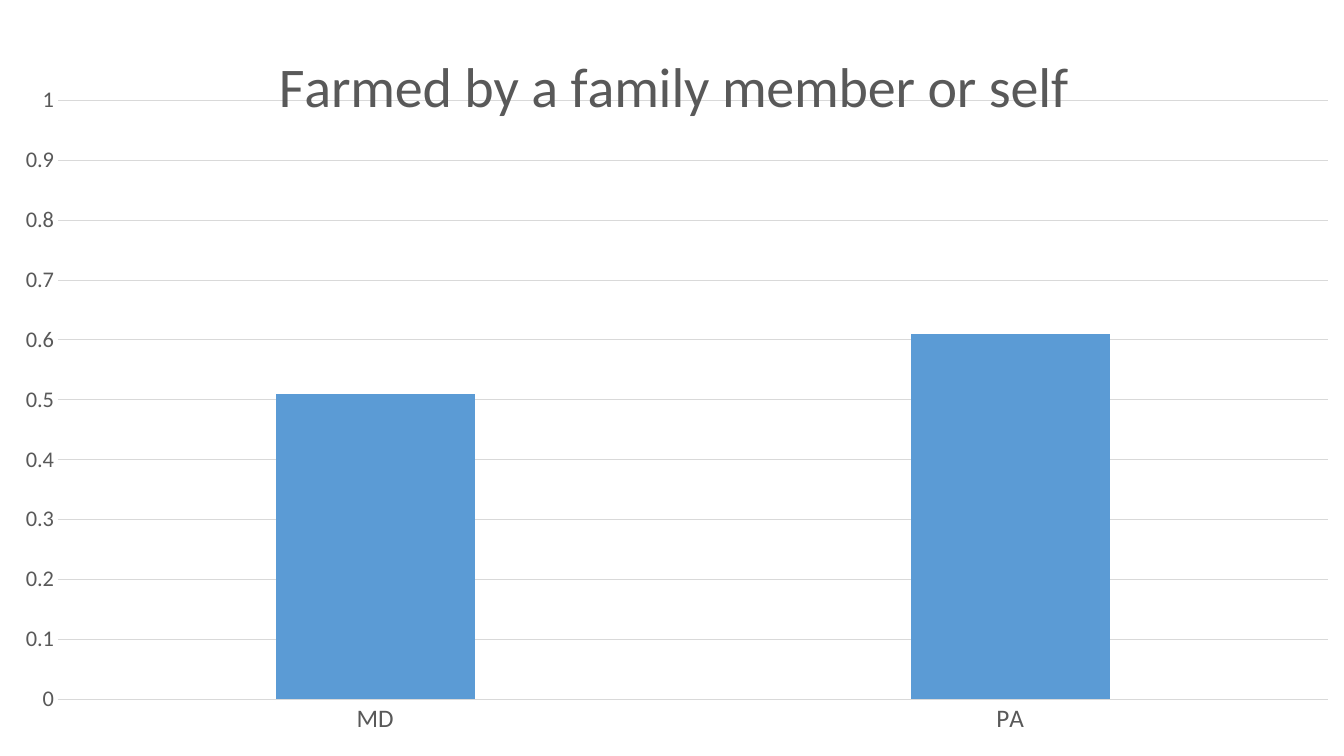
import lxml.etree
import pptx
import pptx.chart.data
import pptx.dml.color
import pptx.enum.chart
import pptx.oxml.ns
import pptx.util

WIDTH, HEIGHT = 1344, 756


def rgb(color):
    return pptx.dml.color.RGBColor.from_string(color)


class ChartSlide:
    """Holds the chart style and the slide being built."""

    font = "Calibri"
    text = "595959"
    rule = "D9D9D9"
    bar = "5B9BD5"

    def __init__(self, prs):
        self.slide = prs.slides.add_slide(prs.slide_layouts[6])

    @staticmethod
    def px(n):
        return pptx.util.Emu(round(n * 12192000 / WIDTH))

    def style_font(self, font, size):
        font.name = self.font
        font.size = pptx.util.Pt(size)
        font.bold = False
        font.color.rgb = rgb(self.text)

    def style_line(self, line):
        line.color.rgb = rgb(self.rule)
        line.width = pptx.util.Pt(0.75)

    def set_layout(self, parent, before, **settings):
        qn = pptx.oxml.ns.qn
        for old in parent.findall(qn("c:layout")):
            parent.remove(old)
        layout = lxml.etree.Element(qn("c:layout"))
        manual = lxml.etree.SubElement(layout, qn("c:manualLayout"))
        for name, value in settings.items():
            lxml.etree.SubElement(manual, qn("c:" + name)).set("val", str(value))
        parent.find(qn("c:" + before)).addprevious(layout)

    def title(self, chart, text, size):
        tf = chart.chart_title.text_frame
        r = tf.paragraphs[0].add_run()
        r.text = text
        self.style_font(r.font, size)
        chart.chart_title.include_in_layout = False
        title = chart.chart_title._element
        self.set_layout(title, "overlay", xMode="edge", yMode="edge", x=0.2, y=0.05)

    def axis(self, axis, size):
        axis.major_tick_mark = pptx.enum.chart.XL_TICK_MARK.NONE
        axis.minor_tick_mark = pptx.enum.chart.XL_TICK_MARK.NONE
        self.style_font(axis.tick_labels.font, size)

    def column_chart(self, x, y, w, h, name, values):
        data = pptx.chart.data.CategoryChartData()
        data.categories = list(values)
        data.add_series(name, list(values.values()))
        chart = self.slide.shapes.add_chart(
            pptx.enum.chart.XL_CHART_TYPE.COLUMN_CLUSTERED,
            *map(self.px, (x, y, w, h)), data).chart
        chart.has_legend = False
        chart.font.name = self.font
        chart.font.size = pptx.util.Pt(10)
        self.title(chart, name, 40)

        self.axis(chart.category_axis, 18)
        self.style_line(chart.category_axis.format.line)
        value_axis = chart.value_axis
        self.axis(value_axis, 16)
        value_axis.minimum_scale, value_axis.maximum_scale = 0, 1
        value_axis.major_unit = 0.1
        value_axis.format.line.fill.background()
        self.style_line(value_axis.major_gridlines.format.line)

        plot = chart.plots[0]
        plot.gap_width, plot.overlap = 219, -27
        plot.vary_by_categories = False
        fill = plot.series[0].format.fill
        fill.solid()
        fill.fore_color.rgb = rgb(self.bar)
        plot_area = plot._element.getparent()
        self.set_layout(plot_area, "barChart", layoutTarget="inner",
                        xMode="edge", yMode="edge", x=0.043, y=0.133, w=0.945, h=0.792)
        return chart


def main():
    prs = pptx.Presentation()
    prs.slide_width = ChartSlide.px(WIDTH)
    prs.slide_height = ChartSlide.px(HEIGHT)
    s = ChartSlide(prs)
    s.column_chart(0, 0, WIDTH, HEIGHT, "Farmed by a family member or self",
                   {"MD": 0.51, "PA": 0.61})
    prs.save("out.pptx")


if __name__ == "__main__":
    main()
